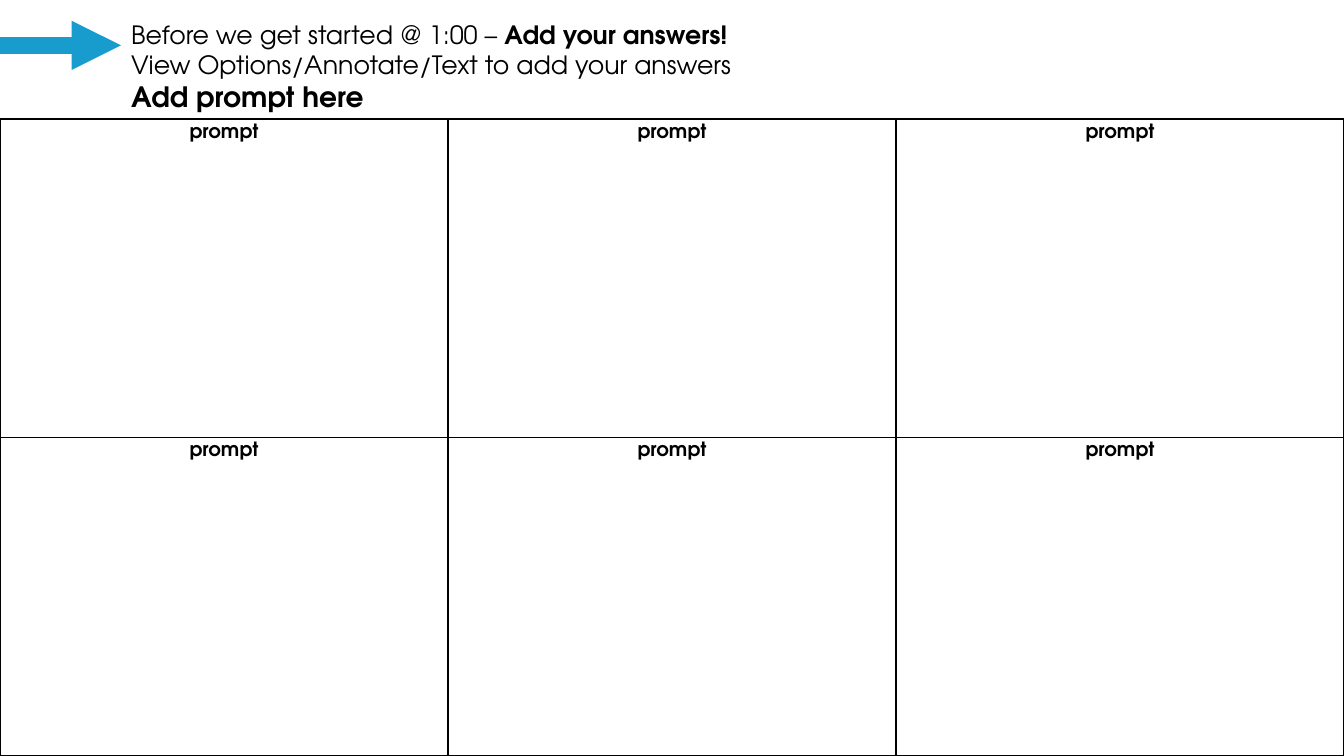
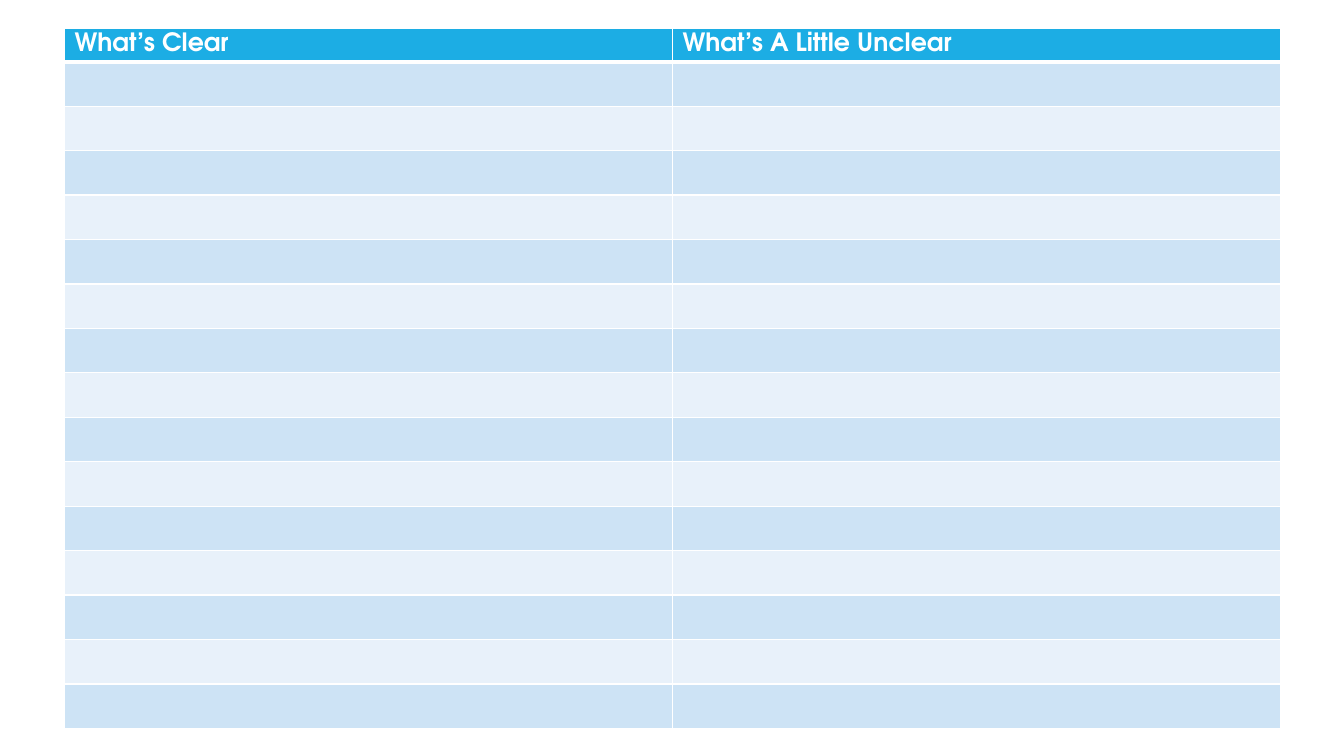
from dataclasses import dataclass

from lxml import etree
from pptx import Presentation
from pptx.dml.color import RGBColor
from pptx.enum.shapes import MSO_CONNECTOR
from pptx.enum.text import MSO_ANCHOR, MSO_AUTO_SIZE, PP_ALIGN
from pptx.oxml.ns import qn
from pptx.util import Inches, Pt

STRAIGHT = MSO_CONNECTOR.STRAIGHT
TOP = MSO_ANCHOR.TOP
NO_FIT = MSO_AUTO_SIZE.NONE
LEFT, CENTER = PP_ALIGN.LEFT, PP_ALIGN.CENTER
TITLE_ONLY, BLANK = 5, 6


@dataclass(frozen=True)
class Theme:
    font: str = "TeX Gyre Adventor"
    black: str = "000000"
    white: str = "FFFFFF"
    arrow: str = "189CCE"
    header: str = "1CADE4"
    bands: tuple = ("CDE3F5", "E8F1FA")
    prompt: int = 14
    body: int = 18
    heading: int = 20
    arrow_width: float = 11.75
    border: int = 1
    header_rule: int = 3


THEME = Theme()
SLIDE_W, SLIDE_H = 13.33, 7.5


def add_run(p, text, size, color=THEME.black, bold=False):
    r = p.add_run()
    r.text = text
    formats = {"name": THEME.font, "size": Pt(size), "bold": bold}
    for name, value in formats.items():
        setattr(r.font, name, value)
    r.font.color.rgb = RGBColor.from_string(color)


def set_borders(cell, color, **widths):
    """Draw the cell's borders; widths in points are keyed L, R, T and B."""
    tc_pr = cell._tc.get_or_add_tcPr()
    for side in "LRTB":
        width = widths.get(side, THEME.border)
        ln = etree.SubElement(tc_pr, qn(f"a:ln{side}"), w=str(Pt(width)))
        fill = etree.SubElement(ln, qn("a:solidFill"))
        etree.SubElement(fill, qn("a:srgbClr"), val=color)


def add_plain_table(s, box, row_heights, cols):
    """Add a table of equal columns without banding."""
    x, y, w, h = map(Inches, box)
    table = s.shapes.add_table(len(row_heights), cols, x, y, w, h).table
    table.first_row = table.horz_banding = False
    for col in table.columns:
        col.width = Inches(box[2] / cols)
    for row, height in zip(table.rows, row_heights):
        row.height = Inches(height)
    return table


def fill_cell(cell, color):
    cell.fill.solid()
    cell.fill.fore_color.rgb = RGBColor.from_string(color)


def add_instructions(s, box):
    title = s.shapes.title
    for name, value in zip(("left", "top", "width", "height"), box):
        setattr(title, name, Inches(value))
    tf = title.text_frame
    formats = {"word_wrap": True, "auto_size": NO_FIT, "vertical_anchor": TOP}
    for name, value in formats.items():
        setattr(tf, name, value)
    lines = [
        [("Before we get started @ 1:00 – ", THEME.body, False),
         ("Add your answers!", THEME.body, True)],
        [("View Options/Annotate/Text to add your answers", THEME.body, False)],
        [("Add prompt here", THEME.heading, True)],
    ]
    for i, runs in enumerate(lines):
        p = tf.add_paragraph() if i else tf.paragraphs[0]
        p.alignment = LEFT
        for text, size, bold in runs:
            add_run(p, text, size, bold=bold)


def add_pointer(s, x1, x2, y):
    arrow = s.shapes.add_connector(
        STRAIGHT, Inches(x1), Inches(y), Inches(x2), Inches(y))
    arrow.line.width = Pt(THEME.arrow_width)
    arrow.line.color.rgb = RGBColor.from_string(THEME.arrow)
    etree.SubElement(arrow.line._get_or_add_ln(), qn("a:tailEnd"), type="triangle")
    etree.SubElement(arrow._element.spPr, qn("a:effectLst"))


def add_prompt_grid(s, box, rows, cols):
    table = add_plain_table(s, box, [box[3] / rows] * rows, cols)
    for cell in table.iter_cells():
        set_borders(cell, THEME.black)
        cell.fill.background()
        p = cell.text_frame.paragraphs[0]
        p.alignment = CENTER
        add_run(p, "prompt", THEME.prompt, bold=True)


def add_clarity_table(s, box, headings, body_rows):
    header_h = 0.33
    body_h = (box[3] - header_h) / body_rows
    table = add_plain_table(
        s, box, [header_h] + [body_h] * body_rows, len(headings))
    for cell, heading in zip(table.rows[0].cells, headings):
        set_borders(cell, THEME.white, B=THEME.header_rule)
        fill_cell(cell, THEME.header)
        add_run(cell.text_frame.paragraphs[0], heading, THEME.body,
                THEME.white, True)
    for i in range(body_rows):
        top = THEME.border if i else THEME.header_rule
        for cell in table.rows[i + 1].cells:
            set_borders(cell, THEME.white, T=top)
            fill_cell(cell, THEME.bands[i % 2])


def build_prompt_slide(prs):
    s = prs.slides.add_slide(prs.slide_layouts[TITLE_ONLY])
    grid_top = 1.18
    add_instructions(s, (1.2, 0.14, 11.78, 1.04))
    add_pointer(s, -0.52, 1.2, 0.45)
    add_prompt_grid(s, (0, grid_top, SLIDE_W, SLIDE_H - grid_top), 2, 3)


def build_clarity_slide(prs):
    s = prs.slides.add_slide(prs.slide_layouts[BLANK])
    add_clarity_table(s, (0.64, 0.28, 12.06, 6.95),
                      ("What’s Clear", "What’s A Little Unclear"), 15)


def main():
    prs = Presentation()
    prs.slide_width, prs.slide_height = Inches(SLIDE_W), Inches(SLIDE_H)
    build_prompt_slide(prs)
    build_clarity_slide(prs)
    prs.save("out.pptx")


if __name__ == "__main__":
    main()
